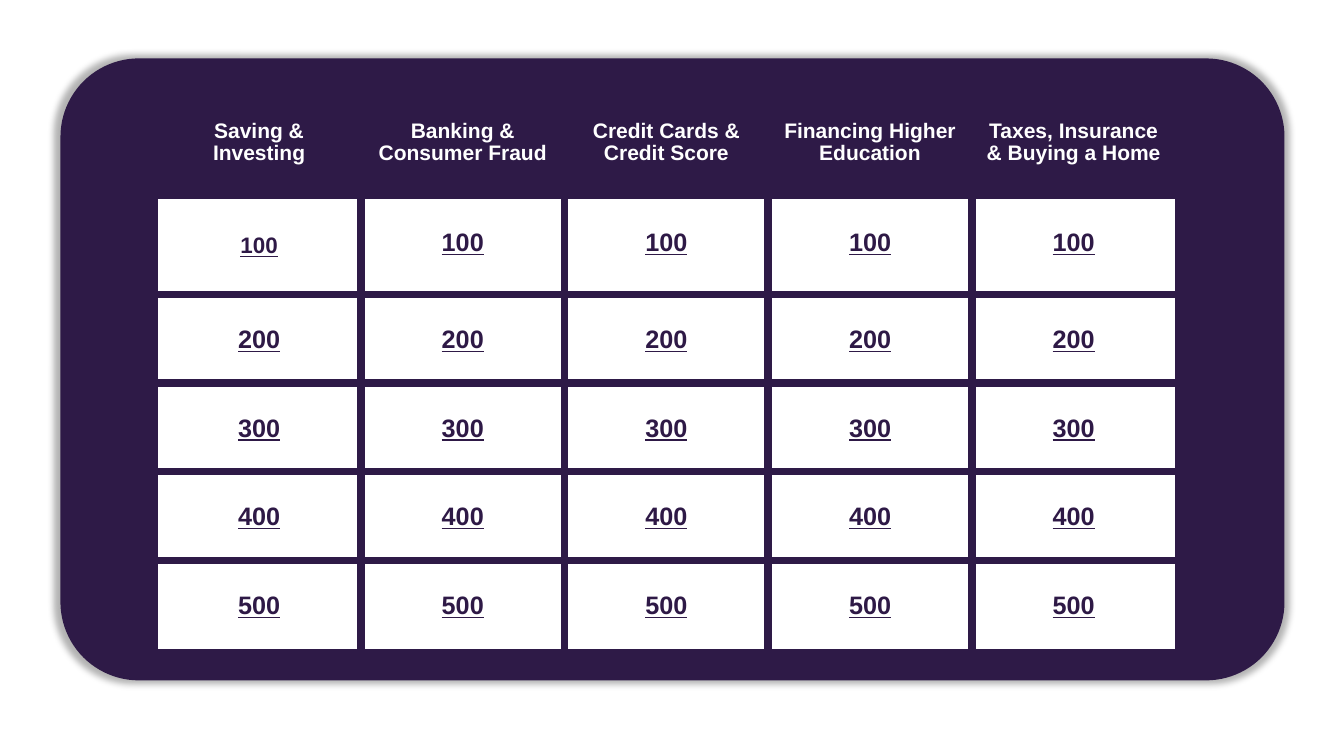
import lxml.etree
import pptx
import pptx.dml.color
import pptx.enum.shapes
import pptx.enum.text
import pptx.oxml
import pptx.oxml.ns
import pptx.util

THEME = {
    "purple": "2E1A47", "ink": "2E1946", "white": "FFFFFF", "font": "Arial",
    "header": 15, "first": 16, "score": 18,
    "outer": 0.25, "heading_rule": 2.25, "inner": 6,
}
CATEGORIES = [
    "Saving & Investing", "Banking & Consumer Fraud", "Credit Cards & Credit Score",
    "Financing Higher Education", "Taxes, Insurance & Buying a Home",
]
SCORES = [100, 200, 300, 400, 500]
ROW_HEIGHTS = [1.08, 0.96] + [0.88] * 4
COLUMN_WIDTH = 2.02
inches = pptx.util.Inches
rgb = pptx.dml.color.RGBColor.from_string


def write_text(cell, text, size, color, underline=None, spacing=None):
    paragraph = cell.text_frame.paragraphs[0]
    paragraph.alignment = pptx.enum.text.PP_ALIGN.CENTER
    paragraph.line_spacing = spacing
    run = paragraph.add_run()
    run.text = text
    font = run.font
    font.name = THEME["font"]
    font.size = pptx.util.Pt(size)
    font.bold = True
    font.underline = underline
    font.color.rgb = rgb(color)


def add_border(cell, side, width):
    """Draw one side (L, R, T or B) of a cell; call before filling the cell."""
    properties = cell._tc.get_or_add_tcPr()
    line = lxml.etree.SubElement(properties, pptx.oxml.ns.qn(f"a:ln{side}"),
                                 w=str(pptx.util.Pt(width)))
    fill = lxml.etree.SubElement(line, pptx.oxml.ns.qn("a:solidFill"))
    lxml.etree.SubElement(fill, pptx.oxml.ns.qn("a:srgbClr"), val=THEME["purple"])


presentation = pptx.Presentation()
presentation.slide_width = inches(13.33)
presentation.slide_height = inches(7.5)
slide = presentation.slides.add_slide(presentation.slide_layouts[6])

# Rounded board with a soft shadow
board = slide.shapes.add_shape(
    pptx.enum.shapes.MSO_SHAPE.ROUNDED_RECTANGLE,
    inches(0.6), inches(0.58), inches(12.14), inches(6.17))
board.adjustments[0] = 0.126
board.fill.solid()
board.fill.fore_color.rgb = rgb(THEME["purple"])
board.line.fill.background()
board.shadow.inherit = False
effects = board._element.spPr.find(pptx.oxml.ns.qn("a:effectLst"))
effects.append(pptx.oxml.parse_xml(
    f'<a:outerShdw {pptx.oxml.ns.nsdecls("a")} blurRad="63500" sx="101000" sy="101000" '
    'algn="ctr" rotWithShape="0"><a:srgbClr val="000000"><a:alpha val="30000"/>'
    '</a:srgbClr></a:outerShdw>'))

# Question grid
row_count, column_count = len(ROW_HEIGHTS), len(CATEGORIES)
table = slide.shapes.add_table(
    row_count, column_count, inches(1.56), inches(0.88),
    inches(COLUMN_WIDTH * column_count), inches(sum(ROW_HEIGHTS))).table
table.first_row = False
table.horz_banding = False
for column in table.columns:
    column.width = inches(COLUMN_WIDTH)
for row, height in zip(table.rows, ROW_HEIGHTS):
    row.height = inches(height)

horizontal_rules = ([THEME["outer"], THEME["heading_rule"]]
                    + [THEME["inner"]] * (row_count - 2) + [THEME["outer"]])
for row in range(row_count):
    is_header = row == 0
    divider = THEME["heading_rule"] if is_header else THEME["inner"]
    vertical_rules = [THEME["outer"]] + [divider] * (column_count - 1) + [THEME["outer"]]
    for column in range(column_count):
        cell = table.cell(row, column)
        add_border(cell, "L", vertical_rules[column])
        add_border(cell, "R", vertical_rules[column + 1])
        add_border(cell, "T", horizontal_rules[row])
        add_border(cell, "B", horizontal_rules[row + 1])
        cell.fill.solid()
        cell.fill.fore_color.rgb = rgb(THEME["purple" if is_header else "white"])
        is_first = (row, column) == (1, 0)
        if is_header or is_first:
            cell.vertical_anchor = pptx.enum.text.MSO_ANCHOR.MIDDLE
        else:
            cell.margin_top = inches(0.31)
        if is_header:
            write_text(cell, CATEGORIES[column], THEME["header"], THEME["white"], spacing=0.95)
        else:
            write_text(cell, str(SCORES[row - 1]), THEME["first" if is_first else "score"],
                       THEME["ink"], underline=True)

presentation.save("out.pptx")
